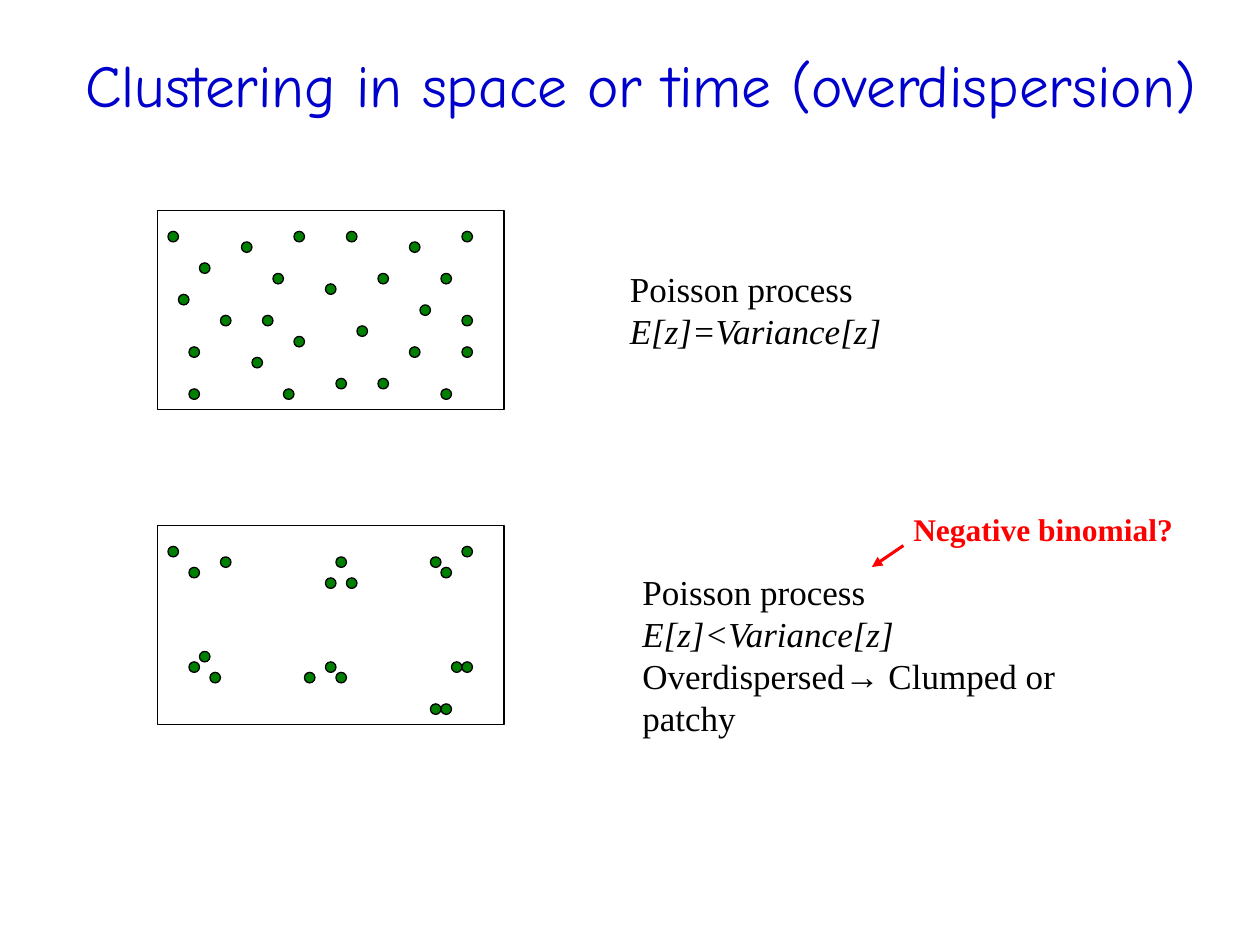
from dataclasses import dataclass

from lxml.etree import SubElement
from pptx import Presentation
from pptx.dml.color import RGBColor
from pptx.enum.shapes import MSO_CONNECTOR as Connector, MSO_SHAPE as Shape
from pptx.enum.text import MSO_ANCHOR as Anchor, MSO_AUTO_SIZE as AutoSize, PP_ALIGN as Align
from pptx.oxml.ns import qn
from pptx.util import Inches, Pt


@dataclass(frozen=True)
class Theme:
    title_font: str = "Comic Neue"
    body_font: str = "Times New Roman"
    title: RGBColor = RGBColor(0x00, 0x00, 0xCC)
    ink: RGBColor = RGBColor(0x00, 0x00, 0x00)
    dot: RGBColor = RGBColor(0x00, 0x80, 0x00)
    accent: RGBColor = RGBColor(0xFF, 0x00, 0x00)
    title_size: int = 34
    body_size: int = 20
    note_size: int = 18
    outline: float = 0.75
    arrow: float = 1.75


THEME = Theme()

# Panels lie on a grid of twelfths of an inch; dots are (column, row).
CELL = 1 / 12
PANEL_COLUMNS, PANEL_ROWS = 33, 19
SCATTERED_DOTS = [
    (1, 2), (8, 3), (2, 8), (3, 13), (10, 10), (17, 16), (13, 2), (24, 13), (11, 6),
    (16, 7), (29, 2), (12, 17), (25, 9), (19, 11), (6, 10), (24, 3), (13, 12), (3, 17),
    (29, 13), (9, 14), (4, 5), (18, 2), (21, 16), (21, 6), (27, 17), (29, 10), (27, 6),
]
CLUMPED_DOTS = [
    (1, 2), (4, 12), (3, 13), (3, 4), (6, 3), (28, 13), (16, 5), (29, 2), (17, 14), (5, 14),
    (26, 3), (14, 14), (16, 13), (29, 13), (27, 4), (17, 3), (26, 17), (18, 5), (27, 17),
]


def write(paragraph, text, *, font=THEME.body_font, size=THEME.body_size,
          color=THEME.ink, bold=False, italic=False, align=Align.LEFT):
    paragraph.alignment = align
    run = paragraph.add_run()
    run.text = text
    run.font.name = font
    run.font.size = Pt(size)
    run.font.color.rgb = color
    run.font.bold = bold
    run.font.italic = italic


def add_text(shapes, box, lines, wrap=False):
    """Add a text box; lines are (text, format) pairs, one paragraph each."""
    frame = shapes.add_textbox(*map(Inches, box)).text_frame
    frame.word_wrap = wrap
    for index, (text, style) in enumerate(lines):
        paragraph = frame.add_paragraph() if index else frame.paragraphs[0]
        write(paragraph, text, **style)


def add_outlined(shapes, kind, box, fill=None):
    shape = shapes.add_shape(kind, *map(Inches, box))
    shape.shadow.inherit = False
    if fill is None:
        shape.fill.background()
    else:
        shape.fill.solid()
        shape.fill.fore_color.rgb = fill
    shape.line.color.rgb = THEME.ink
    shape.line.width = Pt(THEME.outline)


def add_title(slide, box, text):
    title = slide.shapes.title
    title.left, title.top, title.width, title.height = map(Inches, box)
    frame = title.text_frame
    frame.auto_size = AutoSize.NONE
    frame.vertical_anchor = Anchor.BOTTOM
    write(frame.paragraphs[0], text, font=THEME.title_font, size=THEME.title_size,
          color=THEME.title, align=Align.CENTER)


def add_process(slide, left, top, dots, text_box, lines, wrap=False):
    """Add a dot panel at (left, top) and its description, placed relative to it."""
    shapes = slide.shapes.add_group_shape().shapes
    add_outlined(shapes, Shape.RECTANGLE, (left, top, PANEL_COLUMNS * CELL, PANEL_ROWS * CELL))
    for column, row in dots:
        add_outlined(shapes, Shape.OVAL,
                     (left + column * CELL, top + row * CELL, CELL, CELL), THEME.dot)
    x, y, width, height = text_box
    add_text(shapes, (left + x, top + y, width, height), lines, wrap)


def add_note(slide, left, top, text):
    """Add a label with an arrow leading down and left from it."""
    shapes = slide.shapes.add_group_shape().shapes
    ends = (left + 0.02, top + 0.33, left - 0.23, top + 0.5)
    arrow = shapes.add_connector(Connector.STRAIGHT, *map(Inches, ends))
    arrow.line.color.rgb = THEME.accent
    arrow.line.width = Pt(THEME.arrow)
    SubElement(arrow.line._get_or_add_ln(), qn("a:tailEnd"), type="triangle")
    SubElement(arrow._element.spPr, qn("a:effectLst"))
    add_text(shapes, (left, top, 2.26, 0.4),
             [(text, dict(size=THEME.note_size, color=THEME.accent, bold=True))])


def main():
    presentation = Presentation()
    presentation.slide_width, presentation.slide_height = Inches(10), Inches(7.5)
    slide = presentation.slides.add_slide(presentation.slide_layouts[5])

    add_title(slide, (0.17, -0.25, 9.83, 1.25), "Clustering in space or time (overdispersion)")
    add_process(slide, 1.25, 1.67, SCATTERED_DOTS, (3.65, 0.4, 2.21, 0.77), [
        ("Poisson process", {}),
        ("E[z]=Variance[z]", dict(italic=True)),
    ])
    add_process(slide, 1.25, 4.17, CLUMPED_DOTS, (3.75, 0.31, 4.2, 1.1), [
        ("Poisson process", {}),
        ("E[z]<Variance[z]", dict(italic=True)),
        ("Overdispersed→ Clumped or patchy", {}),
    ], wrap=True)
    add_note(slide, 7.15, 4, "Negative binomial?")

    presentation.save("out.pptx")


if __name__ == "__main__":
    main()
